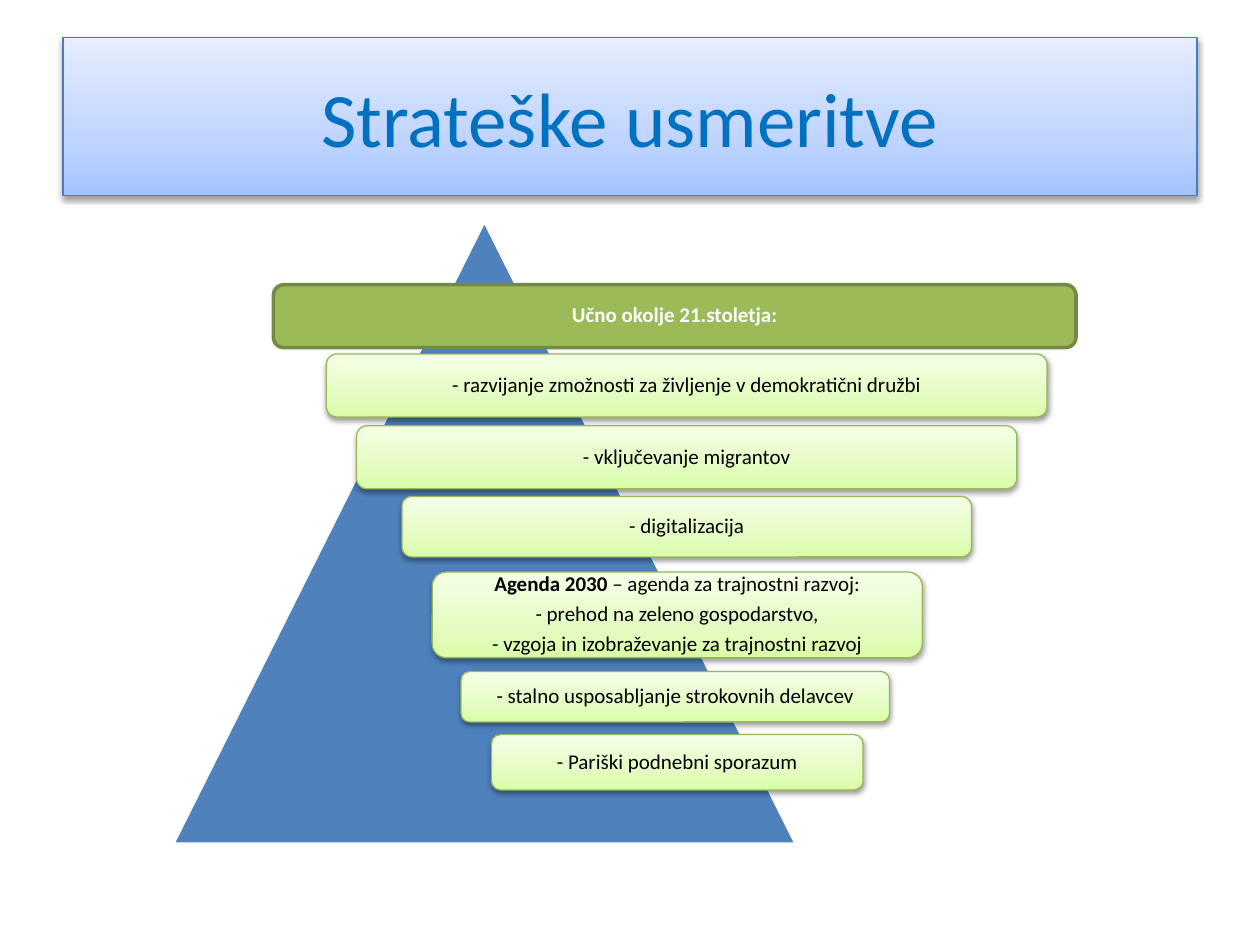
from lxml import etree
from pptx import Presentation
from pptx import util as u
from pptx.dml.color import RGBColor
from pptx.enum import shapes, text
from pptx.oxml import ns

WHITE = RGBColor(0xFF, 0xFF, 0xFF)
BLACK = RGBColor(0x00, 0x00, 0x00)
TITLE_BLUE = RGBColor(0x00, 0x70, 0xC0)
TITLE_EDGE = RGBColor(0x4B, 0x7E, 0xBC)
PYRAMID_BLUE = RGBColor(0x4F, 0x81, 0xBD)
GREEN = RGBColor(0x9B, 0xBB, 0x59)
DARK_GREEN = RGBColor(0x73, 0x8A, 0x42)
LIGHT_EDGE = RGBColor(0x98, 0xB9, 0x55)
BLUE_STOPS = (RGBColor(0xA4, 0xC4, 0xFF), RGBColor(0xBF, 0xD4, 0xFF), RGBColor(0xE6, 0xEE, 0xFF))
GREEN_STOPS = (RGBColor(0xDA, 0xFD, 0xA7), RGBColor(0xE4, 0xFC, 0xC2), RGBColor(0xF5, 0xFF, 0xE7))

presentation = Presentation()
presentation.slide_width, presentation.slide_height = u.Inches(10), u.Inches(7.5)
COLUMN = presentation.slide_width / 100
ROW = presentation.slide_height / 75
slide = presentation.slides.add_slide(presentation.slide_layouts[5])


def add_child(parent, tag, **attributes):
    child = etree.SubElement(parent, ns.qn(tag))
    for name, value in attributes.items():
        child.set(name, str(value))
    return child


def style(shape, fill, edge, weight):
    """Fill with one colour, or with three rising stops and a soft shadow."""
    shape.line.color.rgb, shape.line.width = edge, u.Pt(weight)
    shape.shadow.inherit = False
    if isinstance(fill, RGBColor):
        shape.fill.solid()
        shape.fill.fore_color.rgb = fill
        return
    shape.fill.gradient()
    shape.fill.gradient_angle = 90
    stops = shape.element.spPr.find(".//" + ns.qn("a:gsLst"))
    for stop in list(stops):
        stops.remove(stop)
    for position, color in zip((0, 35, 100), fill):
        stop = add_child(stops, "a:gs", pos=position * 1000)
        add_child(stop, "a:srgbClr", val=color)
    effects = shape.element.spPr.find(ns.qn("a:effectLst"))
    shadow = add_child(effects, "a:outerShdw", blurRad=u.Pt(3.1), dist=u.Pt(1.6),
                       dir=90 * 60000, rotWithShape=0)
    add_child(add_child(shadow, "a:srgbClr", val=BLACK), "a:alpha", val=38000)


title = slide.shapes.title
title.left, title.top = round(5 * COLUMN), round(3 * ROW)
title.width, title.height = round(90 * COLUMN), round(12.5 * ROW)
style(title, BLUE_STOPS, TITLE_EDGE, 0.75)
title.text_frame.text = "Strateške usmeritve"
title.text_frame.vertical_anchor = text.MSO_ANCHOR.MIDDLE
heading = title.text_frame.paragraphs[0]
heading.alignment = text.PP_ALIGN.CENTER
heading.font.name, heading.font.size = "Calibri", u.Pt(44)
heading.font.color.rgb = TITLE_BLUE

pyramid = slide.shapes.add_shape(
    shapes.MSO_SHAPE.ISOSCELES_TRIANGLE, round(13.7 * COLUMN), round(17.5 * ROW),
    round(49.5 * COLUMN), round(49.5 * ROW))
style(pyramid, PYRAMID_BLUE, WHITE, 2)

# Left and width in columns, top and height in rows, then lines of (bold, regular) text
bars = [
    (21.7, 22.6, 63.7, 5.0, [("Učno okolje 21.stoletja:", "")]),
    (25.9, 28.1, 57.2, 5.0, [("", "- razvijanje zmožnosti za življenje v demokratični družbi")]),
    (28.3, 33.8, 52.4, 5.0, [("", "- vključevanje migrantov")]),
    (31.9, 39.4, 45.2, 4.8, [("", "- digitalizacija")]),
    (34.3, 45.4, 38.9, 6.8, [("Agenda 2030 ", "– agenda za trajnostni razvoj:"),
                             ("", "- prehod na zeleno gospodarstvo,"),
                             ("", "- vzgoja in izobraževanje za trajnostni razvoj")]),
    (36.6, 53.3, 34.0, 4.0, [("", "- stalno usposabljanje strokovnih delavcev")]),
    (39.0, 58.3, 29.5, 4.4, [("", "- Pariški podnebni sporazum")]),
]
frame_format = {"word_wrap": True, "vertical_anchor": text.MSO_ANCHOR.MIDDLE}
frame_format.update(dict.fromkeys(
    ("margin_left", "margin_right", "margin_top", "margin_bottom"), u.Inches(0.05)))
paragraph_format = {"alignment": text.PP_ALIGN.CENTER, "line_spacing": 0.9,
                    "space_after": u.Pt(4.2)}

for index, (left, top, width, height, lines) in enumerate(bars):
    bar = slide.shapes.add_shape(
        shapes.MSO_SHAPE.ROUNDED_RECTANGLE, round(left * COLUMN), round(top * ROW),
        round(width * COLUMN), round(height * ROW))
    if index == 0:
        style(bar, GREEN, DARK_GREEN, 2)
    else:
        style(bar, GREEN_STOPS, LIGHT_EDGE, 0.75)
    frame = bar.text_frame
    for name, value in frame_format.items():
        setattr(frame, name, value)
    for number, line in enumerate(lines):
        paragraph = frame.add_paragraph() if number else frame.paragraphs[0]
        for name, value in paragraph_format.items():
            setattr(paragraph, name, value)
        for bold, wording in zip((True, False), line):
            if wording:
                run = paragraph.add_run()
                run.text = wording
                run.font.name, run.font.size, run.font.bold = "Calibri", u.Pt(12), bold
                run.font.color.rgb = BLACK if index else WHITE

presentation.save("out.pptx")
